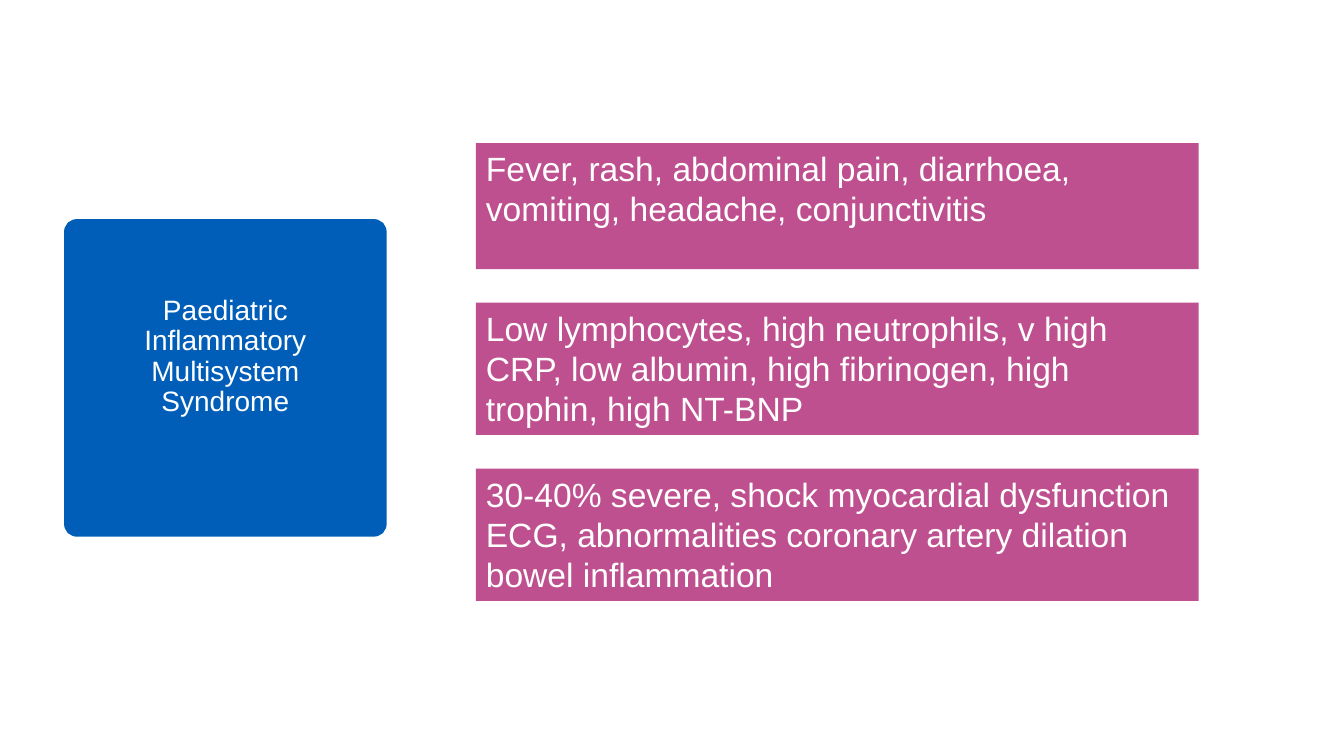
from dataclasses import dataclass

from lxml import etree
from pptx import Presentation
from pptx.dml.color import RGBColor
from pptx.enum.shapes import MSO_SHAPE
from pptx.enum.text import MSO_ANCHOR, MSO_AUTO_SIZE, PP_ALIGN
from pptx.oxml.ns import qn
from pptx.shapes.autoshape import Shape
from pptx.slide import Slide
from pptx.util import Pt

ROUND = MSO_SHAPE.ROUNDED_RECTANGLE
MIDDLE, TOP = MSO_ANCHOR.MIDDLE, MSO_ANCHOR.TOP
FIXED = MSO_AUTO_SIZE.NONE
CENTER, LEFT = PP_ALIGN.CENTER, PP_ALIGN.LEFT


@dataclass(frozen=True)
class Theme:
    blue: RGBColor = RGBColor(0x00, 0x5E, 0xB8)
    plum: RGBColor = RGBColor(0xAE, 0x25, 0x73)
    white: RGBColor = RGBColor(0xFF, 0xFF, 0xFF)
    font: str = "Arial"
    title: float = 20
    body: float = 24
    edge: float = 13.75
    alpha: int = 80


@dataclass(frozen=True)
class Panel:
    text: str
    height: float


THEME = Theme()
TITLE = "Paediatric Inflammatory Multisystem Syndrome"
PANELS = (
    Panel("Fever, rash, abdominal pain, diarrhoea, vomiting, headache, conjunctivitis", 90),
    Panel(
        "Low lymphocytes, high neutrophils, v high CRP, low albumin, "
        "high fibrinogen, high trophin, high NT-BNP",
        94.5,
    ),
    Panel(
        "30-40% severe, shock myocardial dysfunction ECG, "
        "abnormalities coronary artery dilation bowel inflammation",
        94.5,
    ),
)
PANEL_LEFT, PANEL_TOP, PANEL_WIDTH, PANEL_GAP = 340, 102.2, 516.2, 24


def apply(target: object, values: dict[str, object]) -> None:
    for name, value in values.items():
        setattr(target, name, value)


def write(shape: Shape, text: str, size: float, frame: dict, para: dict) -> None:
    body = shape.text_frame
    apply(body, {"word_wrap": True, "auto_size": FIXED, **frame})
    line = body.paragraphs[0]
    apply(line, para)
    run = line.add_run()
    run.text = text
    apply(run.font, {"name": THEME.font, "size": Pt(size)})
    run.font.color.rgb = THEME.white


def draw_title(slide: Slide) -> None:
    shape = slide.shapes.add_shape(ROUND, Pt(52.6), Pt(163.4), Pt(216.7), Pt(213.1))
    shape.adjustments[0] = 0.01
    shape.shadow.inherit = False
    shape.fill.solid()
    shape.fill.fore_color.rgb = THEME.blue
    shape.line.color.rgb = THEME.blue
    shape.line.width = Pt(THEME.edge)
    frame = {
        "vertical_anchor": MIDDLE,
        "margin_left": Pt(30),
        "margin_right": Pt(30),
        "margin_bottom": Pt(33.6),
    }
    write(shape, TITLE, THEME.title, frame, {"alignment": CENTER, "line_spacing": 0.9})


def draw_panel(slide: Slide, panel: Panel, top: float) -> None:
    box = slide.shapes.add_textbox(
        Pt(PANEL_LEFT), Pt(top), Pt(PANEL_WIDTH), Pt(panel.height)
    )
    box.fill.solid()
    box.fill.fore_color.rgb = THEME.plum
    tint = box.element.spPr.find(f"{qn('a:solidFill')}/{qn('a:srgbClr')}")
    etree.SubElement(tint, qn("a:alpha"), val=str(THEME.alpha * 1000))
    write(box, panel.text, THEME.body, {"vertical_anchor": TOP}, {"alignment": LEFT})


def main() -> None:
    deck = Presentation()
    apply(deck, {"slide_width": Pt(960), "slide_height": Pt(540)})
    slide = deck.slides.add_slide(deck.slide_layouts[6])
    draw_title(slide)
    top = PANEL_TOP
    for panel in PANELS:
        draw_panel(slide, panel, top)
        top += panel.height + PANEL_GAP
    deck.save("out.pptx")


if __name__ == "__main__":
    main()
